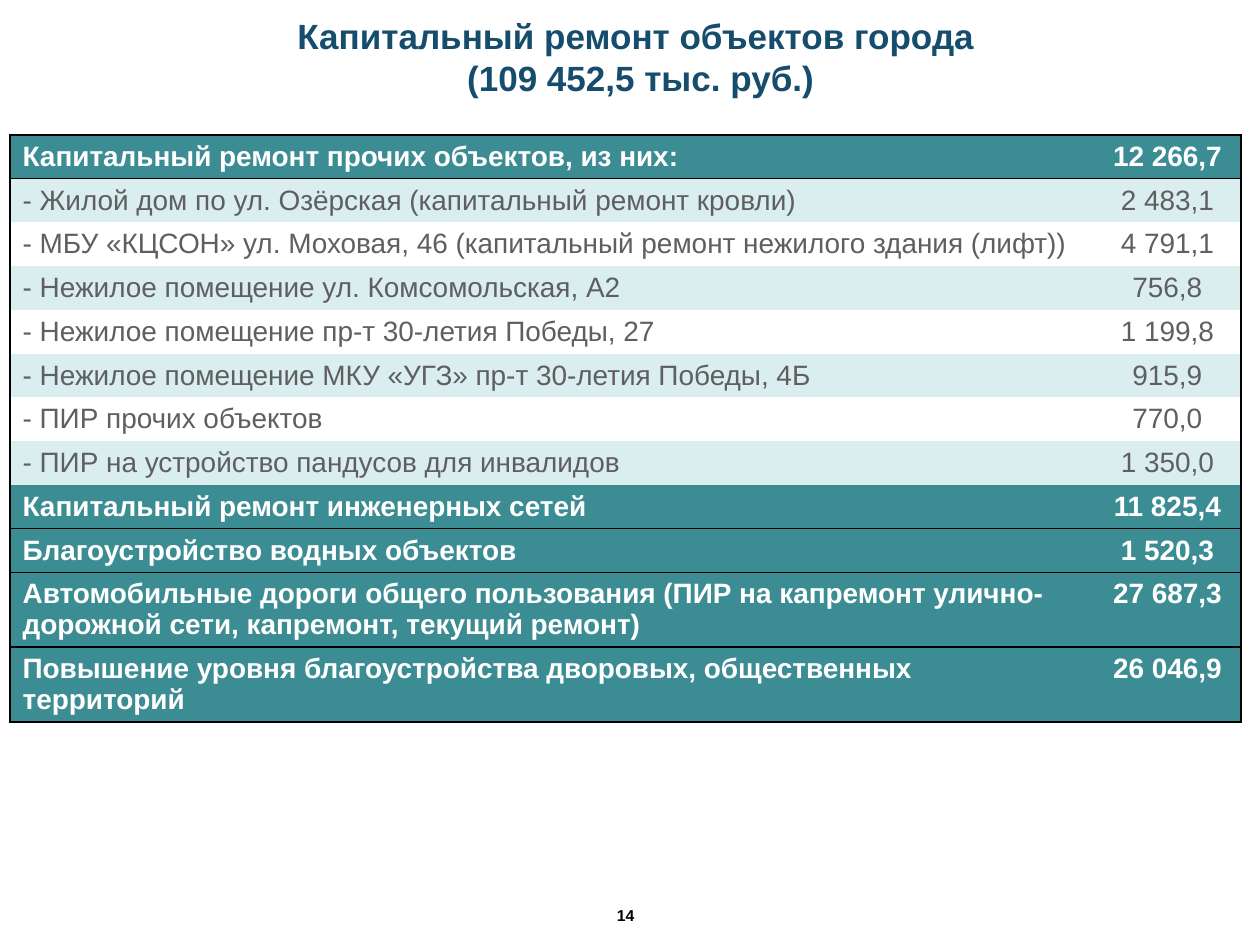
"""Builds the slide on capital repairs of city facilities."""
from lxml import etree
from pptx import Presentation
from pptx.dml.color import RGBColor
from pptx.enum.text import MSO_ANCHOR, PP_ALIGN
from pptx.oxml.ns import qn
from pptx.util import Inches, Pt

LEFT, CENTER = PP_ALIGN.LEFT, PP_ALIGN.CENTER
MIDDLE = MSO_ANCHOR.MIDDLE
TEAL, PALE, WHITE, GRAY, BLACK = "3C8C93", "DAEDEF", "FFFFFF", "5F5F5F", "000000"


def write(frame, text, size=16, color=BLACK, bold=True, align=CENTER):
    frame.word_wrap = True
    paragraph = frame.paragraphs[0]
    paragraph.text = text
    paragraph.alignment = align
    for line_break in paragraph._p.findall(qn("a:br")):
        etree.SubElement(line_break, qn("a:rPr"), sz=str(size * 100))
    for run in paragraph.runs:
        run.font.name = "Arial"
        run.font.size = Pt(size)
        run.font.bold = bold
        run.font.color.rgb = RGBColor.from_string(color)


def set_borders(cell, visible):
    properties = cell._tc.get_or_add_tcPr()
    for side in "LRTB":
        line = etree.SubElement(properties, qn(f"a:ln{side}"), w=str(Pt(1)))
        if side in visible:
            solid = etree.SubElement(line, qn("a:solidFill"))
            etree.SubElement(solid, qn("a:srgbClr"), val=BLACK)
        else:
            etree.SubElement(line, qn("a:noFill"))


repairs = [
    ("Капитальный ремонт прочих объектов, из них:", "12 266,7"),
    ("- Жилой дом по ул. Озёрская (капитальный ремонт кровли)", "2 483,1"),
    ("- МБУ «КЦСОН» ул. Моховая, 46 (капитальный ремонт нежилого здания (лифт))", "4 791,1"),
    ("- Нежилое помещение ул. Комсомольская, А2", "756,8"),
    ("- Нежилое помещение пр-т 30-летия Победы, 27", "1 199,8"),
    ("- Нежилое помещение МКУ «УГЗ» пр-т 30-летия Победы, 4Б", "915,9"),
    ("- ПИР прочих объектов", "770,0"),
    ("- ПИР на устройство пандусов для инвалидов", "1 350,0"),
    ("Капитальный ремонт инженерных сетей", "11 825,4"),
    ("Благоустройство водных объектов", "1 520,3"),
    ("Автомобильные дороги общего пользования (ПИР на капремонт улично-дорожной сети, "
     "капремонт, текущий ремонт)", "27 687,3"),
    ("Повышение уровня благоустройства дворовых, общественных территорий", "26 046,9"),
]
ruled_edges = {0, 1, 9, 10, 11, 12}
two_line_rows = {10, 11}

prs = Presentation()
prs.slide_width, prs.slide_height = Inches(10), Inches(7.5)
slide = prs.slides.add_slide(prs.slide_layouts[5])

title = slide.shapes.title
title.left, title.top = Inches(0.17), Inches(0.21)
title.width, title.height = Inches(9.83), Inches(0.47)
title.text_frame.vertical_anchor = MIDDLE
write(title.text_frame, "Капитальный ремонт объектов города \v(109 452,5 тыс. руб.)",
      size=20, color="164C6C")

costs = slide.shapes.add_table(len(repairs), 2, Inches(0.08), Inches(1.07),
                               Inches(9.77), Inches(4.58)).table
costs.columns[0].width, costs.columns[1].width = Inches(8.6), Inches(1.17)
for index, entry in enumerate(repairs):
    costs.rows[index].height = Inches(0.59 if index in two_line_rows else 0.34)
    is_item = entry[0].startswith("-")
    band = PALE if index % 2 else WHITE
    edges = ("T" if index in ruled_edges else "") + ("B" if index + 1 in ruled_edges else "")
    for column, (text, align, side) in enumerate(zip(entry, (LEFT, CENTER), "LR")):
        cell = costs.cell(index, column)
        set_borders(cell, edges + side)
        cell.fill.solid()
        cell.fill.fore_color.rgb = RGBColor.from_string(band if is_item else TEAL)
        write(cell.text_frame, text, color=GRAY if is_item else WHITE,
              bold=not is_item, align=align)

page_number = slide.shapes.add_textbox(Inches(4.69), Inches(7.14), Inches(0.55), Inches(0.25))
page_number.text_frame.vertical_anchor = MIDDLE
write(page_number.text_frame, "14", size=9)

prs.save("out.pptx")
